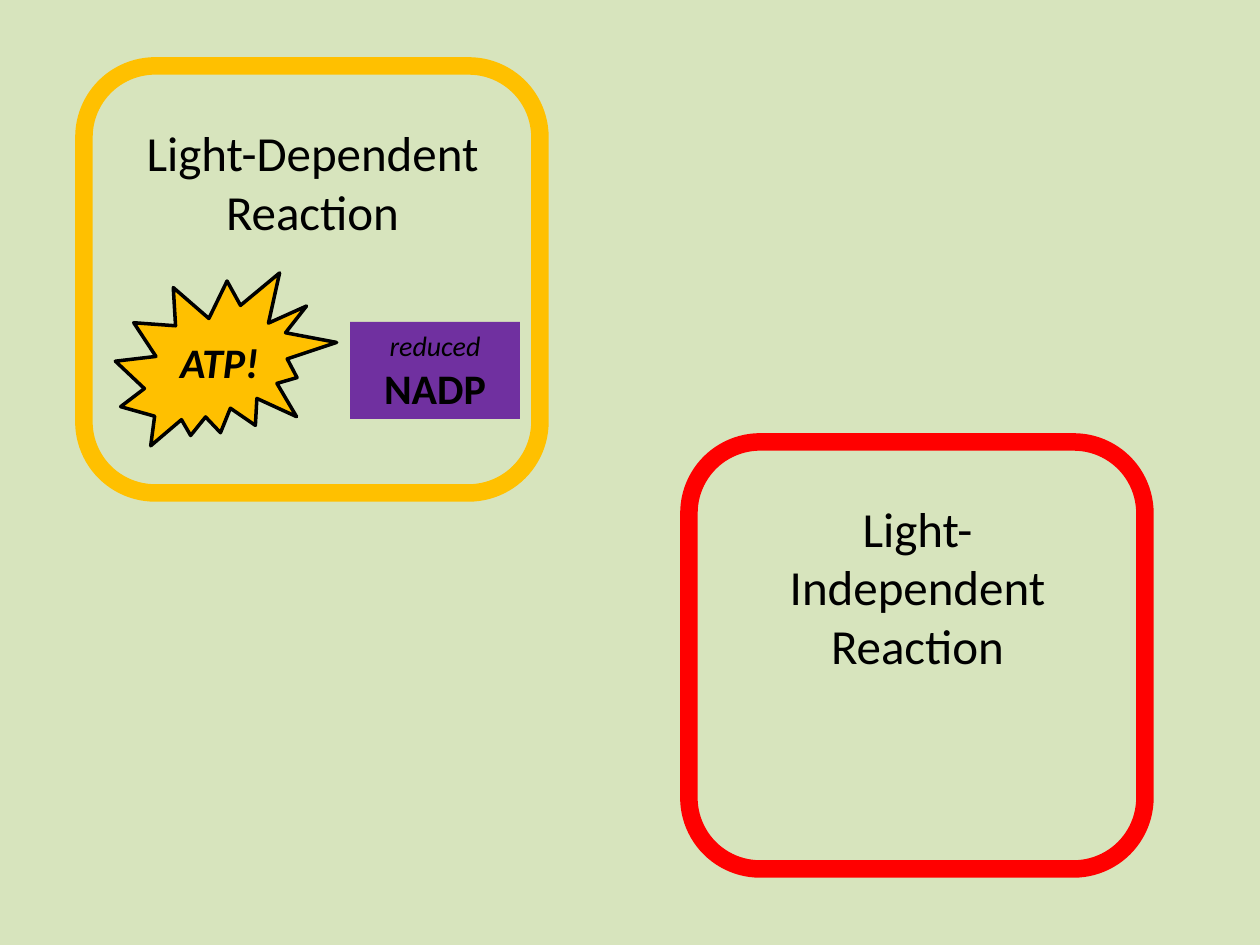
from pptx import Presentation
from pptx.dml.color import RGBColor
from pptx.enum.shapes import MSO_SHAPE
from pptx.enum.text import MSO_ANCHOR, PP_ALIGN
from pptx.util import Pt

PX = 914400 / 126
ROUND = MSO_SHAPE.ROUNDED_RECTANGLE
BURST = MSO_SHAPE.EXPLOSION2
RECT = MSO_SHAPE.RECTANGLE
MID = MSO_ANCHOR.MIDDLE
MAIN = PP_ALIGN.CENTER
GOLD = "FFC000"


def paint(fmt, color):
    fmt.solid()
    fmt.fore_color.rgb = RGBColor.from_string(color)


def write(frame, lines):
    frame.word_wrap = True
    for i, (text, size, bold, slant) in enumerate(lines):
        para = frame.paragraphs[0] if i == 0 else frame.add_paragraph()
        para.alignment = MAIN
        run = para.add_run()
        run.text = text
        font = run.font
        font.name = "Calibri"
        font.size = Pt(size)
        font.bold = bold
        font.italic = slant
        paint(font.fill, "000000")


deck = Presentation()
deck.slide_width = round(1260 * PX)
deck.slide_height = round(945 * PX)
slide = deck.slides.add_slide(deck.slide_layouts[6])
paint(slide.background.fill, "D7E4BD")
shapes = slide.shapes

stages = [
    (84, 66, 131, GOLD, "Light-Dependent Reaction"),
    (689, 442, 190, "FF0000", "Light-Independent Reaction"),
]
for x, y, high, color, name in stages:
    box = [round(n * PX) for n in (x, y, 456, 427)]
    frame = shapes.add_shape(ROUND, *box)
    frame.shadow.inherit = False
    frame.fill.background()
    paint(frame.line.fill, color)
    frame.line.width = Pt(10)
    box = [round(n * PX) for n in (x + 40, y + 50, 377, high)]
    label = shapes.add_textbox(*box)
    write(label.text_frame, [(name, 28, False, False)])

group = shapes.add_group_shape()
box = [round(n * PX) for n in (117, 265, 215, 192)]
burst = group.shapes.add_shape(BURST, *box)
burst.rotation = 9.6
burst.shadow.inherit = False
paint(burst.fill, GOLD)
paint(burst.line.fill, "000000")
burst.line.width = Pt(2)
box = [round(n * PX) for n in (166, 330, 107, 63)]
label = group.shapes.add_textbox(*box)
write(label.text_frame, [("ATP!", 24, True, True)])

box = [round(n * PX) for n in (350, 322, 170, 97)]
block = shapes.add_shape(RECT, *box)
block.shadow.inherit = False
paint(block.fill, "7030A0")
block.line.fill.background()
block.text_frame.vertical_anchor = MID
write(block.text_frame, [("reduced", 16, False, True), ("NADP", 24, True, False)])

deck.save("out.pptx")
